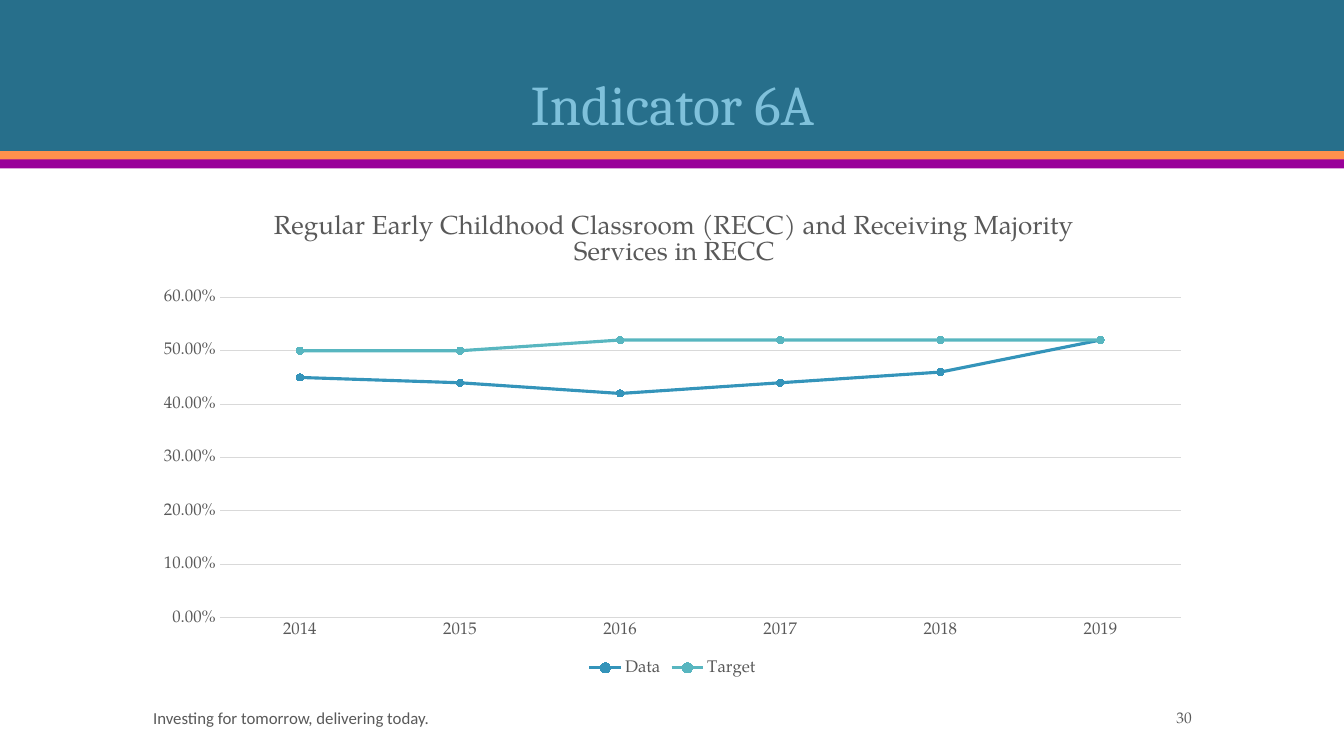
"""Build the Indicator 6A slide."""
from dataclasses import dataclass

from pptx import Presentation
from pptx.chart import data as cd
from pptx.dml.color import RGBColor
from pptx.enum import chart as ce, shapes, text
from pptx.oxml import parse_xml
from pptx.oxml.ns import nsdecls, qn
from pptx.util import Inches, Pt


@dataclass(frozen=True)
class Theme:
    """Colours, fonts and type sizes."""
    teal: str = "276F8B"
    orange: str = "FF914D"
    purple: str = "990099"
    sky: str = "7FC1DB"
    gray: str = "595959"
    grid: str = "D9D9D9"
    blue: str = "3494BA"
    aqua: str = "58B6C0"
    head: str = "Cambria"
    body: str = "TeX Gyre Pagella"
    foot: str = "Calibri"
    big: float = 40
    mid: float = 18.6
    small: float = 12
    tiny: float = 11


@dataclass(frozen=True)
class Band:
    """A full-width stripe."""
    top: float
    tall: float
    fill: str


@dataclass(frozen=True)
class Label:
    """A line of text and its box."""
    words: str
    box: tuple[float, float, float, float]
    face: str
    size: float
    color: str
    align: text.PP_ALIGN
    anchor: text.MSO_ANCHOR
    pitch: float = 1.0


@dataclass(frozen=True)
class Line:
    """A chart series."""
    name: str
    vals: tuple[float, ...]
    color: str


T = Theme()
WIDE, LEFT, SPAN, TALL = 13.33, 1.42, 10.5, 4.75
ALIGN, ANCHOR = text.PP_ALIGN, text.MSO_ANCHOR
YEARS = ("2014", "2015", "2016", "2017", "2018", "2019")
BANDS = (
    Band(0, 1.5, T.teal),
    Band(1.5, 0.09, T.orange),
    Band(1.58, 0.09, T.purple),
)
LABELS = (
    Label("Indicator 6A", (LEFT, 0.28, SPAN, 1.13), T.head, T.big, T.sky,
          ALIGN.CENTER, ANCHOR.BOTTOM, 0.9),
    Label("Investing for tomorrow, delivering today.", (LEFT, 6.97, 6.83, 0.3),
          T.foot, T.small, T.gray, ALIGN.LEFT, ANCHOR.MIDDLE),
    Label("30", (10.42, 6.97, 1.5, 0.3), T.body, T.tiny, T.gray,
          ALIGN.RIGHT, ANCHOR.MIDDLE),
)
LINES = (
    Line("Data", (0.45, 0.44, 0.42, 0.44, 0.46, 0.52), T.blue),
    Line("Target", (0.5, 0.5, 0.52, 0.52, 0.52, 0.52), T.aqua),
)
TITLE = ("Regular Early Childhood Classroom (RECC) and Receiving Majority "
         "Services in RECC")


def rgb(code: str) -> RGBColor:
    """Turn a hex code into a colour."""
    return RGBColor.from_string(code)


def style(font, face: str, size: float, color: str) -> None:
    """Set the face, size and colour of a font."""
    font.name, font.size, font.bold = face, Pt(size), False
    font.color.rgb = rgb(color)


def stroke(line, color: str, width: float) -> None:
    """Set the colour and width of a line."""
    line.color.rgb, line.width = rgb(color), Pt(width)


def place(node, slot: int, target: str, **spots: float) -> None:
    """Fix part of the chart at lengths in inches from its corner."""
    for old in node.findall(qn("c:layout")):
        node.remove(old)
    modes = "".join(f'<c:{key}Mode val="edge"/>' for key in "xy")
    sizes = "".join(f'<c:{key} val="{spot / (SPAN if key in "xw" else TALL):.4f}"/>'
                    for key, spot in spots.items())
    node.insert(slot, parse_xml(
        f'<c:layout {nsdecls("c")}><c:manualLayout>{target}{modes}{sizes}'
        '</c:manualLayout></c:layout>'))


def draw_band(slide, band: Band) -> None:
    """Draw one stripe."""
    bar = slide.shapes.add_shape(
        shapes.MSO_SHAPE.RECTANGLE, 0, Inches(band.top), Inches(WIDE), Inches(band.tall))
    bar.shadow.inherit = False
    bar.fill.solid()
    bar.fill.fore_color.rgb = rgb(band.fill)
    bar.line.fill.background()


def draw_label(slide, label: Label) -> None:
    """Draw one text box."""
    frame = slide.shapes.add_textbox(*map(Inches, label.box)).text_frame
    frame.word_wrap = True
    frame.vertical_anchor = label.anchor
    para = frame.paragraphs[0]
    para.text, para.alignment = label.words, label.align
    para.line_spacing = label.pitch
    style(para.font, label.face, label.size, label.color)


def draw_chart(slide) -> None:
    """Draw the line chart of results and targets."""
    data = cd.CategoryChartData(number_format="0.00%")
    data.categories = YEARS
    for line in LINES:
        data.add_series(line.name, line.vals)
    chart = slide.shapes.add_chart(
        ce.XL_CHART_TYPE.LINE_MARKERS, Inches(LEFT), Inches(2),
        Inches(SPAN), Inches(TALL), data).chart
    style(chart.font, T.body, T.small, T.gray)

    chart.has_title = True
    para = chart.chart_title.text_frame.paragraphs[0]
    para.text = TITLE
    style(para.font, T.body, T.mid, T.gray)
    place(chart.chart_title._element, 1, "", x=1.25, y=0.06)
    place(chart._chartSpace.chart.plotArea, 0, '<c:layoutTarget val="inner"/>',
          x=0.76, y=0.95, w=9.53, h=3.18)

    chart.has_legend = True
    chart.legend.position = ce.XL_LEGEND_POSITION.BOTTOM
    chart.legend.include_in_layout = False
    style(chart.legend.font, T.body, T.small, T.gray)

    years, rates = chart.category_axis, chart.value_axis
    for axis in (years, rates):
        axis.major_tick_mark = axis.minor_tick_mark = ce.XL_TICK_MARK.NONE
        style(axis.tick_labels.font, T.body, T.small, T.gray)
    stroke(years.format.line, T.grid, 0.75)
    rates.format.line.fill.background()
    rates.minimum_scale, rates.maximum_scale, rates.major_unit = 0, 0.6, 0.1
    rates.tick_labels.number_format = "0.00%"
    rates.tick_labels.number_format_is_linked = False
    stroke(rates.major_gridlines.format.line, T.grid, 0.75)

    plot = chart.plots[0]
    plot.vary_by_categories = False
    for series, line in zip(plot.series, LINES):
        series.smooth = False
        stroke(series.format.line, line.color, 2.25)
        mark = series.marker
        mark.style, mark.size = ce.XL_MARKER_STYLE.CIRCLE, 5
        mark.format.fill.solid()
        mark.format.fill.fore_color.rgb = rgb(line.color)
        stroke(mark.format.line, line.color, 0.75)


def main() -> None:
    """Build and save the slide."""
    deck = Presentation()
    deck.slide_width, deck.slide_height = Inches(WIDE), Inches(7.5)
    slide = deck.slides.add_slide(deck.slide_layouts[6])
    for band in BANDS:
        draw_band(slide, band)
    draw_chart(slide)
    for label in LABELS:
        draw_label(slide, label)
    deck.save("out.pptx")


if __name__ == "__main__":
    main()
